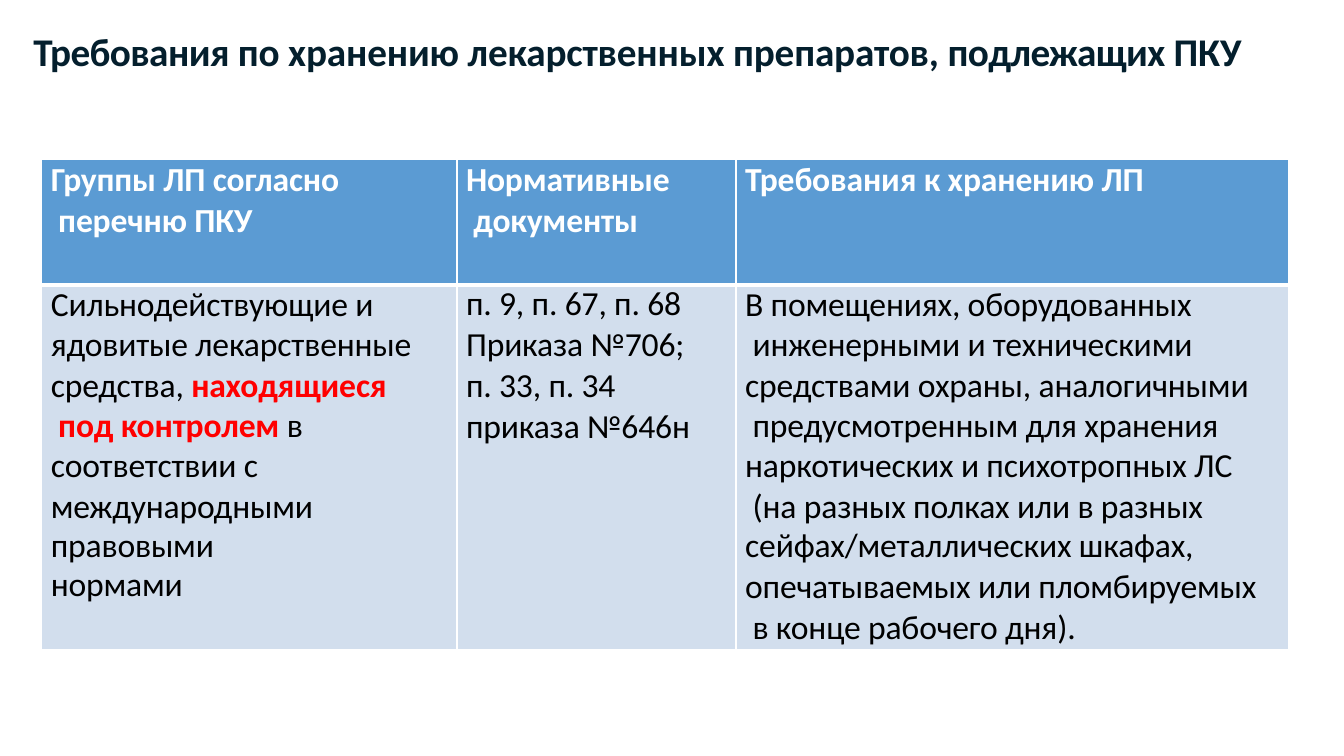
"""Build a slide on storage rules for controlled medicines."""
from lxml import etree
from pptx import Presentation
from pptx.dml.color import RGBColor
from pptx.enum.text import MSO_ANCHOR, MSO_AUTO_SIZE, PP_ALIGN
from pptx.oxml.ns import qn
from pptx.util import Pt

TOP = MSO_ANCHOR.TOP
GROW = MSO_AUTO_SIZE.SHAPE_TO_FIT_TEXT
LEFT = PP_ALIGN.LEFT
FONT = "Calibri"
TITLE_ONLY = 5
COLORS = {"ink": "041F2D", "white": "FFFFFF", "black": "000000",
          "red": "FF0000", "head": "5B9BD3", "body": "D2DEED"}
TITLE = [("Требования ", -40), ("по хранению лекарственных препаратов, ", -10),
         ("подлежащих ", -40), ("ПКУ", -10)]
WIDTHS = [296.6, 199.4, 394.6]
HEIGHTS = [90, 260]
HEADS = ["Группы ЛП согласно\n перечню ПКУ", "Нормативные\n документы",
         "Требования к хранению ЛП"]
GROUPS = [
    ([("Сильнодействующие и\nядовитые лекарственные", "black")], 28.8),
    ([("средства, ", "black"), ("находящиеся\n под контролем ", "red"),
      ("в", "black")], 28.8),
    ([("соответствии с\nмеждународными", "black")], 28.8),
    ([("правовыми\nнормами", "black")], 27.9),
]
ORDERS = [
    ([("п. 9, п. 67, п. 68", "black")], 28.2),
    ([("Приказа №706;", "black")], None),
    ([("п. 33, п. 34", "black")], None),
    ([("приказа №646н", "black")], None),
]
RULES = [
    ([("В помещениях, оборудованных\n инженерными и техническими", "black")], 28.8),
    ([("средствами охраны, аналогичными\n предусмотренным для хранения",
       "black")], 28.8),
    ([("наркотических и психотропных ЛС\n (на разных полках или в разных",
       "black")], 28.8),
    ([("сейфах/металлических шкафах,", "black")], 27.9),
    ([("опечатываемых или пломбируемых\n в конце рабочего дня).", "black")], None),
]


def add_run(para, text, size, color, bold, track=-10):
    """Add a styled run, with a line break at each newline."""
    for num, part in enumerate(text.split("\n")):
        if num:
            para.add_line_break()
        run = para.add_run()
        run.text = part
        font = run.font
        font.name = FONT
        font.size = Pt(size)
        font.bold = bold
        font.color.rgb = RGBColor.from_string(COLORS[color])
        font._element.set("spc", str(track))


def add_title(slide):
    """Place and fill the title."""
    shape = slide.shapes.title
    shape.left, shape.top = Pt(23.8), Pt(18.7)
    shape.width, shape.height = Pt(874), Pt(35.3)
    frame = shape.text_frame
    frame.margin_left = frame.margin_right = frame.margin_bottom = 0
    frame.margin_top = Pt(1)
    frame.vertical_anchor = TOP
    frame.word_wrap = True
    frame.auto_size = GROW
    para = frame.paragraphs[0]
    para.alignment = LEFT
    para.line_spacing = 1.0
    for text, track in TITLE:
        add_run(para, text, 28, "ink", True, track)


def set_edge(cell, side, width):
    """Draw one white cell border."""
    props = cell._tc.get_or_add_tcPr()
    line = etree.SubElement(props, qn("a:" + side), w=str(Pt(width)))
    fill = etree.SubElement(line, qn("a:solidFill"))
    etree.SubElement(fill, qn("a:srgbClr"), val=COLORS["white"])


def fill_cell(cell, paras, fill, bold, edges):
    """Set the borders, fill and text of a cell."""
    for side, width in zip(("lnL", "lnR", "lnT", "lnB"), edges):
        set_edge(cell, side, width)
    cell.fill.solid()
    cell.fill.fore_color.rgb = RGBColor.from_string(COLORS[fill])
    cell.margin_left = Pt(6.5)
    cell.margin_right = cell.margin_top = cell.margin_bottom = 0
    cell.vertical_anchor = TOP
    frame = cell.text_frame
    for num, (runs, lead) in enumerate(paras):
        para = frame.add_paragraph() if num else frame.paragraphs[0]
        para.alignment = LEFT
        if lead:
            para.line_spacing = Pt(lead)
        for text, color in runs:
            add_run(para, text, 24, color, bold or color == "red")


def add_grid(slide):
    """Add the table of groups, orders and rules."""
    frame = slide.shapes.add_table(
        len(HEIGHTS), len(WIDTHS), Pt(29.8), Pt(113.8),
        Pt(sum(WIDTHS)), Pt(sum(HEIGHTS)))
    table = frame.table
    table.horz_banding = False
    for row, height in zip(table.rows, HEIGHTS):
        row.height = Pt(height)
    for col, width in zip(table.columns, WIDTHS):
        col.width = Pt(width)
    for num, (head, paras) in enumerate(zip(HEADS, (GROUPS, ORDERS, RULES))):
        fill_cell(table.cell(0, num), [([(head, "white")], None)],
                  "head", True, (1, 1, 1, 3))
        fill_cell(table.cell(1, num), paras, "body", False, (1, 1, 3, 1))


def main():
    """Build and save the deck."""
    deck = Presentation()
    deck.slide_width, deck.slide_height = Pt(960), Pt(540)
    slide = deck.slides.add_slide(deck.slide_layouts[TITLE_ONLY])
    add_title(slide)
    add_grid(slide)
    deck.save("out.pptx")


if __name__ == "__main__":
    main()
